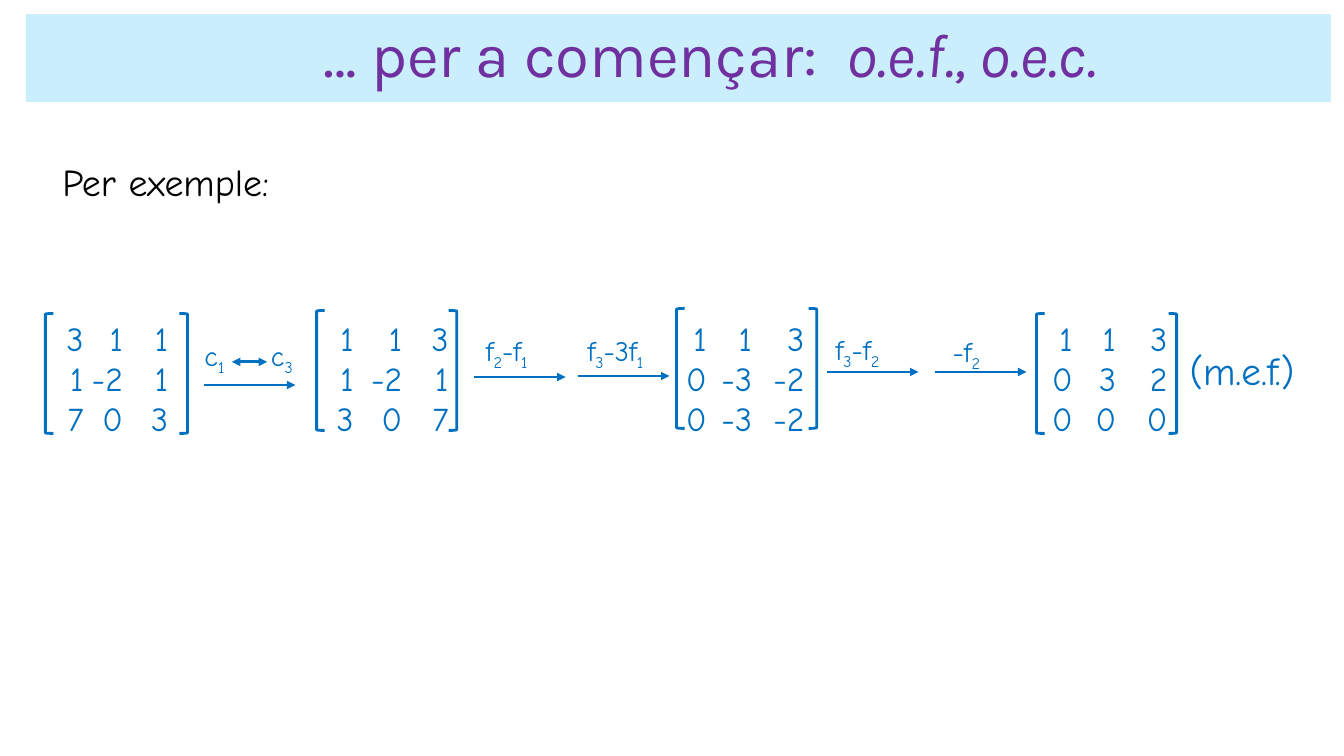
from lxml import etree
from pptx import Presentation
from pptx import util as u
from pptx.dml.color import RGBColor
from pptx.enum import shapes, text
from pptx.oxml.ns import qn

CELL = u.Inches(0.1)
BLUE, PURPLE, PALE, BLACK = "0070C0", "7030A0", "CAEEFB", "000000"
BODY_FONT, TITLE_FONT = "Comic Neue", "Karla"
MATRIX_TOP, MATRIX_WIDTH, MATRIX_HEIGHT = 31, 27.2, 20.5
BRACKET_WIDTH, BRACKET_HEIGHT = 0.8, 11.9
ARROW_LENGTH = 9.1

MATRICES = [
    (4.6, (4.5, 17.8), 31.1, (2.7, 6.6, 11.1), ["3 1 1", "1 -2 1", "7 0 3"]),
    (31.5, (31.4, 44.5), 30.8, (2.6, 7.4, 12), ["1 1 3", "1 -2 1", "3 0 7"]),
    (66.4, (67.1, 80.2), 30.6, (2.7, 7.2, 12.4), ["1 1 3", "0 -3 -2", "0 -3 -2"]),
    (102.7, (102.8, 115.9), 31.1, (2.7, 7, 12.1), ["1 1 3", "0 3 2", "0 0 0"]),
]
STEPS = [
    (19.3, 33.1, ("c", "1", "\tc", "3"), 20.2, 38.2),
    (47.2, 32.6, ("f", "2", "-f", "1"), 47, 37.4),
    (57.3, 32.6, ("f", "3", "-3f", "1"), 57.3, 37.3),
    (81.9, 32.5, ("f", "3", "-f", "2"), 82, 36.9),
    (93.5, 32.7, ("-f", "2"), 92.7, 36.9),
]


def color(value):
    return RGBColor.from_string(value)


def grid(*cells):
    return [u.Emu(round(cell * CELL)) for cell in cells]


def format_runs(paragraph, size, ink=BLUE, name=BODY_FONT):
    for run in paragraph.runs:
        run.font.size = u.Pt(size)
        run.font.name = name
        run.font.color.rgb = color(ink)


def set_tabs(paragraph, positions, alignment):
    properties = paragraph._p.get_or_add_pPr()
    tabs = etree.SubElement(properties, qn("a:tabLst"))
    for position in grid(*positions):
        etree.SubElement(tabs, qn("a:tab"), pos=str(position), algn=alignment)


def add_frame(slide, left, top, width, height, wrap=True):
    frame = slide.shapes.add_textbox(*grid(left, top, width, height)).text_frame
    frame.word_wrap = wrap
    return frame


def add_text(slide, box, words, size, ink, wrap=True):
    frame = add_frame(slide, *box, wrap=wrap)
    frame.text = words
    format_runs(frame.paragraphs[0], size, ink)


def add_bracket(slide, kind, left, top):
    box = grid(left, top, BRACKET_WIDTH, BRACKET_HEIGHT)
    bracket = slide.shapes.add_shape(kind, *box)
    bracket.shadow.inherit = False
    bracket.fill.background()
    bracket.line.color.rgb = color(BLUE)
    bracket.line.width = u.Pt(2)


def add_matrix(slide, left, brackets, bracket_top, columns, rows):
    frame = add_frame(slide, left, MATRIX_TOP, MATRIX_WIDTH, MATRIX_HEIGHT)
    frame.text = "\n".join("\t" + "\t".join(row.split()) for row in rows)
    for paragraph in frame.paragraphs:
        set_tabs(paragraph, columns, "r")
        format_runs(paragraph, 24)
    kinds = (shapes.MSO_SHAPE.LEFT_BRACKET, shapes.MSO_SHAPE.RIGHT_BRACKET)
    for kind, bracket_left in zip(kinds, brackets):
        add_bracket(slide, kind, bracket_left, bracket_top)


def add_arrow(slide, left, top, length, ends=("tailEnd",)):
    arrow = slide.shapes.add_connector(
        shapes.MSO_CONNECTOR.STRAIGHT, *grid(left, top, left + length, top))
    arrow.line.color.rgb = color(BLUE)
    arrow.line.width = u.Pt(2)
    line = arrow.line._get_or_add_ln()
    for end in ends:
        etree.SubElement(line, qn(f"a:{end}"), type="triangle")
    etree.SubElement(arrow._element.spPr, qn("a:effectLst"))


def add_step(slide, left, top, parts, arrow_left, arrow_top):
    paragraph = add_frame(slide, left, top, 11.4, 4.4).paragraphs[0]
    set_tabs(paragraph, [6.6], "l")
    for index, part in enumerate(parts):
        run = paragraph.add_run()
        run.text = part
        if index % 2:
            run.font._element.set("baseline", "-25000")
    format_runs(paragraph, 20)
    add_arrow(slide, arrow_left, arrow_top, ARROW_LENGTH)


def format_title(slide):
    title = slide.shapes.title
    title.left, title.top, title.width, title.height = grid(2.6, 1.4, 129.4, 8.7)
    title.fill.solid()
    title.fill.fore_color.rgb = color(PALE)
    frame = title.text_frame
    frame.auto_size = text.MSO_AUTO_SIZE.NONE
    frame.word_wrap = True
    frame.vertical_anchor = text.MSO_ANCHOR.MIDDLE
    frame.margin_left = grid(7.2)[0]
    paragraph = frame.paragraphs[0]
    paragraph.alignment = text.PP_ALIGN.CENTER
    paragraph.line_spacing = 0.9
    for words, italic in (("… per a començar: ", False), (" o.e.f., o.e.c.", True)):
        run = paragraph.add_run()
        run.text = words
        run.font.italic = italic
    format_runs(paragraph, 44, PURPLE, TITLE_FONT)


def main():
    presentation = Presentation()
    presentation.slide_width = u.Inches(13.33)
    presentation.slide_height = u.Inches(7.5)
    slide = presentation.slides.add_slide(presentation.slide_layouts[5])
    format_title(slide)
    add_text(slide, (5.2, 15.3, 120.6, 5.6), "Per exemple:", 27, BLACK)
    for matrix in MATRICES:
        add_matrix(slide, *matrix)
    for step in STEPS:
        add_step(slide, *step)
    add_arrow(slide, 23, 35.9, 3.5, ("headEnd", "tailEnd"))
    add_text(slide, (117, 33.9, 15.4, 5.7), "(m.e.f.)", 28, BLUE, wrap=False)
    presentation.save("out.pptx")


if __name__ == "__main__":
    main()
